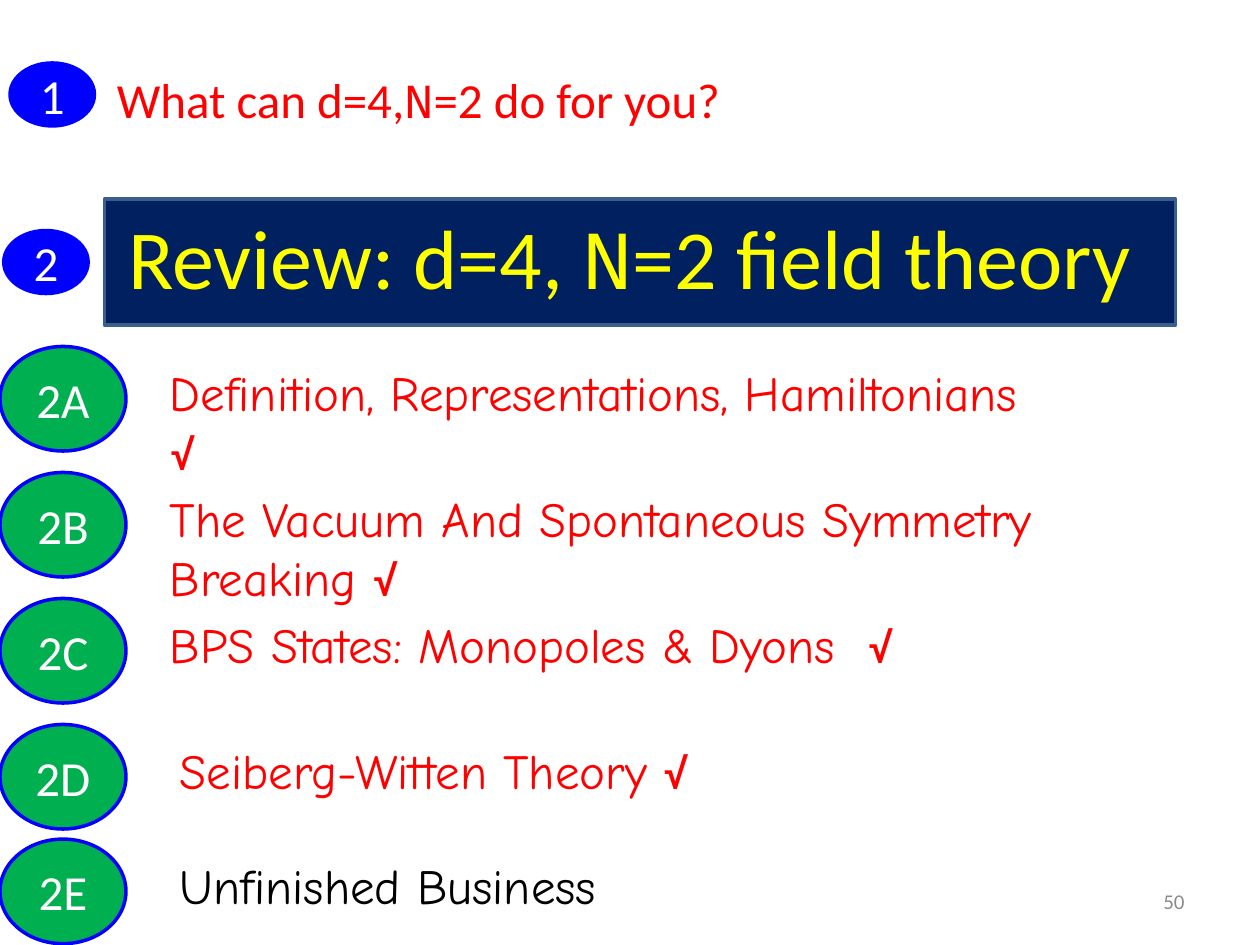
import pptx
import pptx.util
import pptx.dml.color
import pptx.enum.shapes
import pptx.enum.text

Inches, Pt = pptx.util.Inches, pptx.util.Pt
RGBColor = pptx.dml.color.RGBColor
SHAPE = pptx.enum.shapes.MSO_SHAPE
ALIGN = pptx.enum.text.PP_ALIGN
ANCHOR = pptx.enum.text.MSO_ANCHOR

NAVY = RGBColor(0x00, 0x20, 0x60)
STEEL = RGBColor(0x3A, 0x5F, 0x8C)
BLUE = RGBColor(0x00, 0x00, 0xFF)
GREEN = RGBColor(0x00, 0xB0, 0x50)
RED = RGBColor(0xFF, 0x00, 0x00)
YELLOW = RGBColor(0xFF, 0xFF, 0x00)
WHITE = RGBColor(0xFF, 0xFF, 0xFF)
BLACK = RGBColor(0x00, 0x00, 0x00)
GRAY = RGBColor(0x8C, 0x8C, 0x8C)

BODY, MONO, HAND, CHECK = "Calibri", "Courier New", "Comic Neue", "Roboto Condensed"
DONE = ("√", CHECK)

# Content: runs are (text, font); "\n" is a line break
QUESTION = [("What can d=4,", BODY), ("N", MONO), ("=2 do for you?", BODY)]
REVIEW = [("Review: d=4, ", BODY), ("N", MONO), ("=2 field theory", BODY)]
SECTIONS = [("1", 0.08, 0.5), ("2", 0.03, 1.83)]  # label, left, top
TOPICS = [  # label, badge top, text left, text width, colour, runs
    ("2A", 2.75, 1.25, 7.35, RED,
     [("Definition, Representations, Hamiltonians", HAND), ("\n", HAND), DONE]),
    ("2B", 3.75, 1.25, 8.58, RED,
     [("The Vacuum And Spontaneous Symmetry Breaking ", HAND), DONE]),
    ("2C", 4.75, 1.25, 8.58, RED, [("BPS States: Monopoles & Dyons  ", HAND), DONE]),
    ("2D", 5.75, 1.33, 7.35, RED, [("Seiberg-Witten Theory ", HAND), DONE]),
    ("2E", 6.66, 1.33, 7.35, BLACK, [("Unfinished Business", HAND)]),
]
TEXT_DROP = 0.08  # topic text starts this far below its badge's top

prs = pptx.Presentation()
prs.slide_width, prs.slide_height = Inches(10), Inches(7.5)
s = prs.slides.add_slide(prs.slide_layouts[6])


def write(tf, runs, size=28, color=RED, align=ALIGN.LEFT, anchor=ANCHOR.TOP, wrap=True):
    tf.word_wrap = wrap
    tf.vertical_anchor = anchor
    p = tf.paragraphs[0]
    p.alignment = align
    for text, font in runs:
        if text == "\n":
            p.add_line_break()
            continue
        r = p.add_run()
        r.text = text
        r.font.name, r.font.size = font, Pt(size)
        r.font.color.rgb = color


def add_text(runs, left, top, width, height=0.57, **fmt):
    box = s.shapes.add_textbox(Inches(left), Inches(top), Inches(width), Inches(height))
    write(box.text_frame, runs, **fmt)


def add_filled(kind, left, top, width, height, fill, line):
    sp = s.shapes.add_shape(kind, Inches(left), Inches(top), Inches(width), Inches(height))
    sp.shadow.inherit = False
    sp.fill.solid()
    sp.fill.fore_color.rgb = fill
    sp.line.color.rgb = line
    sp.line.width = Pt(2)
    return sp


def add_badge(label, left, top, width, height, fill):
    sp = add_filled(SHAPE.OVAL, left, top, width, height, fill, BLUE)
    write(sp.text_frame, [(label, BODY)], color=WHITE, align=ALIGN.CENTER,
          anchor=ANCHOR.MIDDLE)


# Headings
add_filled(SHAPE.RECTANGLE, 0.83, 1.58, 8.5, 1, NAVY, STEEL)
add_text(REVIEW, 0.92, 1.58, 8.47, 0.91, size=48, color=YELLOW, wrap=False)
add_text(QUESTION, 0.83, 0.5, 5.18, wrap=False)
for label, left, top in SECTIONS:
    add_badge(label, left, top, 0.67, 0.5, BLUE)

# Topics of the second section
for label, top, left, width, color, runs in TOPICS:
    add_badge(label, 0, top, 1, 0.83, GREEN)
    add_text(runs, left, top + TEXT_DROP, width, color=color)

# Slide number
add_text([("50", BODY)], 7.17, 6.95, 2.33, 0.4, size=12, color=GRAY,
         align=ALIGN.RIGHT, anchor=ANCHOR.MIDDLE)

prs.save("out.pptx")
